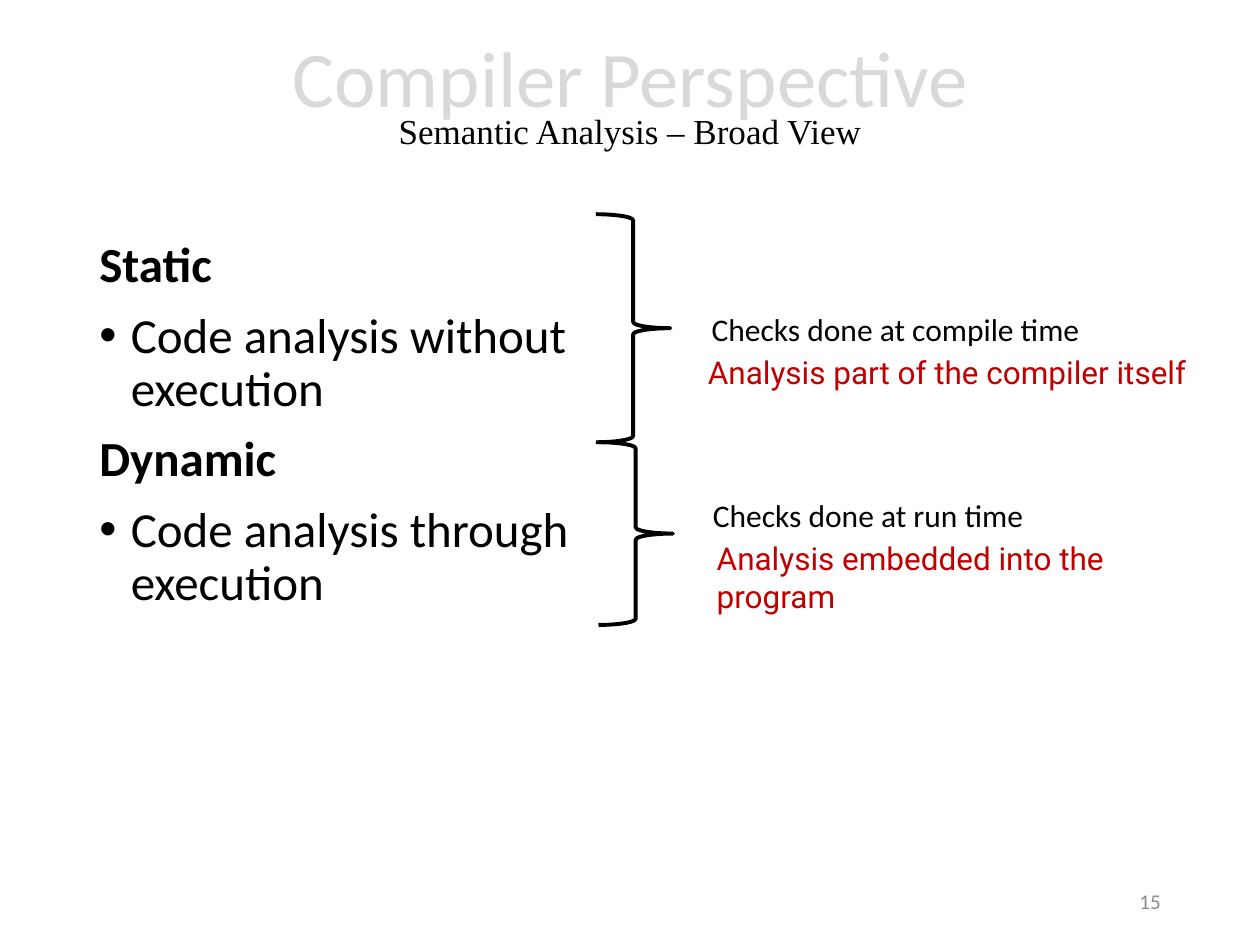
from dataclasses import dataclass

from lxml.etree import SubElement
from pptx import Presentation
from pptx.dml.color import RGBColor
from pptx.enum.shapes import MSO_SHAPE
from pptx.enum.text import MSO_ANCHOR, PP_ALIGN
from pptx.oxml.ns import qn
from pptx.util import Inches, Pt


@dataclass
class Box:
    left: float
    top: float
    width: float
    height: float


@dataclass
class Note:
    text: str
    box: Box
    font: str = "Calibri"
    color: str = "000000"
    wrap: bool = True


@dataclass
class Topic:
    heading: str
    detail: str


def rgb(value: str) -> RGBColor:
    return RGBColor.from_string(value)


def lengths(box: Box) -> list:
    return [Inches(v) for v in (box.left, box.top, box.width, box.height)]


def style(r, size: float, font: str, color: str, bold: bool = False) -> None:
    r.font.size = Pt(size)
    r.font.name = font
    r.font.bold = bold
    r.font.color.rgb = rgb(color)


def add_text(s, box: Box, text: str, anchor=MSO_ANCHOR.TOP, wrap: bool = True):
    tf = s.shapes.add_textbox(*lengths(box)).text_frame
    tf.word_wrap = wrap
    tf.vertical_anchor = anchor
    tf.text = text
    return tf


def add_bullet(p) -> None:
    pPr = p._p.get_or_add_pPr()
    pPr.set("marL", str(Inches(0.25)))
    pPr.set("indent", str(Inches(-0.25)))
    SubElement(pPr, qn("a:buFont"), typeface="Arial")
    SubElement(pPr, qn("a:buChar"), char="•")


def add_title(s, title: str, subtitle: str) -> None:
    tf = add_text(s, Box(0.69, 0.09, 8.62, 1.45), f"{title}\v{subtitle}", MSO_ANCHOR.MIDDLE)
    p = tf.paragraphs[0]
    p.alignment = PP_ALIGN.CENTER
    p.line_spacing = 0.7
    style(p.runs[0], 45, "Calibri", "D9D9D9")
    style(p.runs[1], 20, "Times New Roman", "000000")


def add_topics(s, topics: list[Topic]) -> None:
    lines = [line for t in topics for line in (t.heading, t.detail)]
    tf = add_text(s, Box(0.69, 1.86, 4.5, 4.76), "\n".join(lines))
    for i, p in enumerate(tf.paragraphs):
        is_heading = i % 2 == 0
        p.line_spacing = 0.9
        p.space_before = Pt(10)
        style(p.runs[0], 28, "Calibri", "000000", bold=is_heading)
        if not is_heading:
            add_bullet(p)


def add_brace(s, box: Box) -> None:
    sp = s.shapes.add_shape(MSO_SHAPE.RIGHT_BRACE, *lengths(box))
    sp.shadow.inherit = False
    sp.fill.background()
    sp.line.color.rgb = rgb("000000")
    sp.line.width = Pt(2.25)


def add_note(s, note: Note) -> None:
    tf = add_text(s, note.box, note.text, wrap=note.wrap)
    style(tf.paragraphs[0].runs[0], 18, note.font, note.color)


def add_page_number(s, number: int) -> None:
    tf = add_text(s, Box(7.06, 6.95, 2.25, 0.4), str(number), MSO_ANCHOR.MIDDLE)
    p = tf.paragraphs[0]
    p.alignment = PP_ALIGN.RIGHT
    style(p.runs[0], 12, "Calibri", "8C8C8C")


TOPICS = [
    Topic("Static", "Code analysis without execution"),
    Topic("Dynamic", "Code analysis through execution"),
]
BRACES = [Box(4.73, 1.7, 0.59, 1.81), Box(4.75, 3.51, 0.59, 1.45)]
NOTES = [
    Note("Checks done at compile time", Box(5.55, 2.41, 4, 0.4)),
    Note("Checks done at run time", Box(5.56, 3.89, 2.7, 0.4), wrap=False),
    Note("Analysis part of the compiler itself", Box(5.52, 2.75, 4, 0.71), "Roboto", "C00000"),
    Note("Analysis embedded into the program", Box(5.59, 4.23, 4, 0.71), "Roboto", "C00000"),
]


def main() -> None:
    prs = Presentation()
    prs.slide_width, prs.slide_height = Inches(10), Inches(7.5)
    s = prs.slides.add_slide(prs.slide_layouts[6])
    add_title(s, "Compiler Perspective", "Semantic Analysis – Broad View")
    add_topics(s, TOPICS)
    add_page_number(s, 15)
    for brace in BRACES:
        add_brace(s, brace)
    for note in NOTES:
        add_note(s, note)
    prs.save("out.pptx")


if __name__ == "__main__":
    main()
